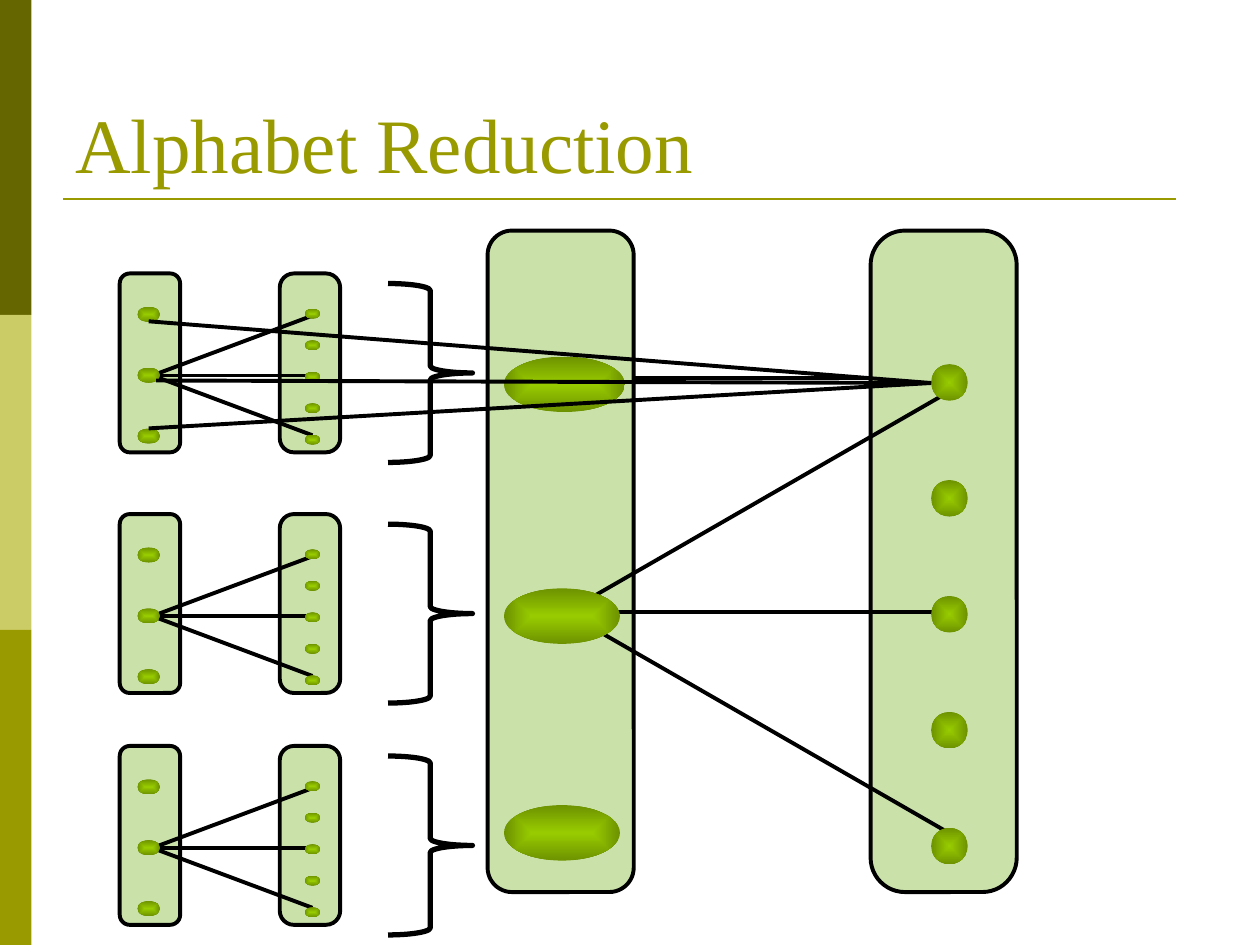
from lxml.etree import SubElement
from pptx import Presentation
from pptx.dml.color import RGBColor
from pptx.enum.shapes import MSO_CONNECTOR, MSO_SHAPE as Shape
from pptx.enum.text import MSO_ANCHOR
from pptx.oxml.ns import qn
from pptx.util import Inches, Pt

OLIVE, BLACK, PANEL = "999900", "000000", "CAE2AA"
DOT_CENTER, DOT_EDGE = "99CC00", "6D9200"


def color(hex_string):
    return RGBColor.from_string(hex_string)


def add_line(shapes, start, end, line_color=BLACK, width=2.25):
    line = shapes.add_connector(
        MSO_CONNECTOR.STRAIGHT, *(Inches(value) for value in (*start, *end)))
    line.line.color.rgb = color(line_color)
    line.line.width = Pt(width)
    SubElement(line._element.spPr, qn("a:effectLst"))
    return line


def add_shape(shapes, kind, box, fill=None, line_width=None):
    shape = shapes.add_shape(kind, *(Inches(value) for value in box))
    shape.shadow.inherit = False
    if fill:
        shape.fill.solid()
        shape.fill.fore_color.rgb = color(fill)
    else:
        shape.fill.background()
    if line_width:
        shape.line.color.rgb = color(BLACK)
        shape.line.width = Pt(line_width)
    else:
        shape.line.fill.background()
    return shape


def add_panel(shapes, box, rounding=0.16667):
    panel = add_shape(shapes, Shape.ROUNDED_RECTANGLE, box, PANEL, 2.25)
    panel.adjustments[0] = rounding


def add_dot(shapes, box):
    """Ellipse shaded from a bright centre to a darker edge."""
    dot = add_shape(shapes, Shape.OVAL, box)
    dot.fill.gradient()
    for stop, hex_string in zip(dot.fill.gradient_stops, (DOT_CENTER, DOT_EDGE)):
        stop.color.rgb = color(hex_string)
    gradient = dot._element.spPr.find(qn("a:gradFill"))
    gradient.remove(gradient.find(qn("a:lin")))
    shading = SubElement(gradient, qn("a:path"), path="shape")
    SubElement(shading, qn("a:fillToRect"),
               {side: "50000" for side in ("l", "t", "r", "b")})


def add_frame(slide, left, top, width, height):
    """Side bands, rule and title."""
    band_height = height / 3
    for index, fill in enumerate(("666600", "CCCC66", OLIVE)):
        add_shape(slide.shapes, Shape.RECTANGLE,
                  (left, top + index * band_height, 0.25, band_height), fill)
    add_line(slide.shapes, (left + 0.5, top + 1.58), (left + 9.33, top + 1.58),
             OLIVE, 1.5)

    title = slide.shapes.add_textbox(
        Inches(left + 0.5), Inches(top + 0.3), Inches(width - 1), Inches(1.25))
    frame = title.text_frame
    frame.word_wrap = True
    frame.vertical_anchor = MSO_ANCHOR.BOTTOM
    paragraph = frame.paragraphs[0]
    paragraph.text = "Alphabet Reduction"
    paragraph.font.name = "Times New Roman"
    paragraph.font.size = Pt(44)
    paragraph.font.color.rgb = color(OLIVE)


def add_large_graph(slide, left, top, width, height):
    """Two tall panels, with the middle left node joined to three right nodes."""
    shapes = slide.shapes
    panel_width = 1.16
    add_line(shapes, (left + 0.88, top + 1.17), (left + 3.67, top + 1.17))
    add_panel(shapes, (left + width - panel_width, top, panel_width, height), 0.235)
    add_panel(shapes, (left, top, panel_width, height))

    add_dot(shapes, (left + 0.13, top + 1, 0.96, 0.44))
    add_dot(shapes, (left + 0.13, top + 4.56, 0.92, 0.44))
    for rise in (1.75, 0, -1.75):
        add_line(shapes, (left + 0.62, top + 3.03), (left + 3.66, top + 3.03 + rise))
    for row in range(5):
        add_dot(shapes, (left + 3.52, top + 1.06 + row * 0.92, 0.29, 0.29))
    add_dot(shapes, (left + 0.13, top + 2.84, 0.92, 0.44))


def add_small_graph(slide, left, top, width, height):
    """Small three-to-five graph and the brace beside it."""
    shapes = slide.shapes.add_group_shape().shapes
    panel_width = 0.48
    add_panel(shapes, (left + width - panel_width, top, panel_width, height), 0.235)
    add_panel(shapes, (left, top, panel_width, height))
    for rise in (0.475, 0, -0.475):
        add_line(shapes, (left + 0.26, top + 0.81), (left + 1.53, top + 0.81 + rise))
    for row in range(5):
        add_dot(shapes, (left + 1.47, top + 0.28 + row * 0.25, 0.12, 0.08))
    for row in range(3):
        add_dot(shapes, (left + 0.14, top + 0.265 + row * 0.483, 0.18, 0.12))
    add_shape(slide.shapes, Shape.RIGHT_BRACE,
              (left + 2.13, top + 0.08, 0.67, height), line_width=3)


def add_cross_links(slide, target):
    """Top small graph's left nodes joined to the top right node."""
    for start in ((1.18, 2.55), (1.24, 3.02), (1.18, 3.4)):
        add_line(slide.shapes, start, target)


def main():
    presentation = Presentation()
    presentation.slide_width, presentation.slide_height = Inches(10), Inches(7.5)
    slide = presentation.slides.add_slide(presentation.slide_layouts[6])
    add_frame(slide, 0, 0, 10, 7.5)
    add_large_graph(slide, 3.87, 1.83, 4.2, 5.25)
    for top in (2.17, 4.08, 5.92):
        add_small_graph(slide, 0.95, top, 1.75, 1.42)
    add_cross_links(slide, (7.39, 3.04))
    presentation.save("out.pptx")


if __name__ == "__main__":
    main()
